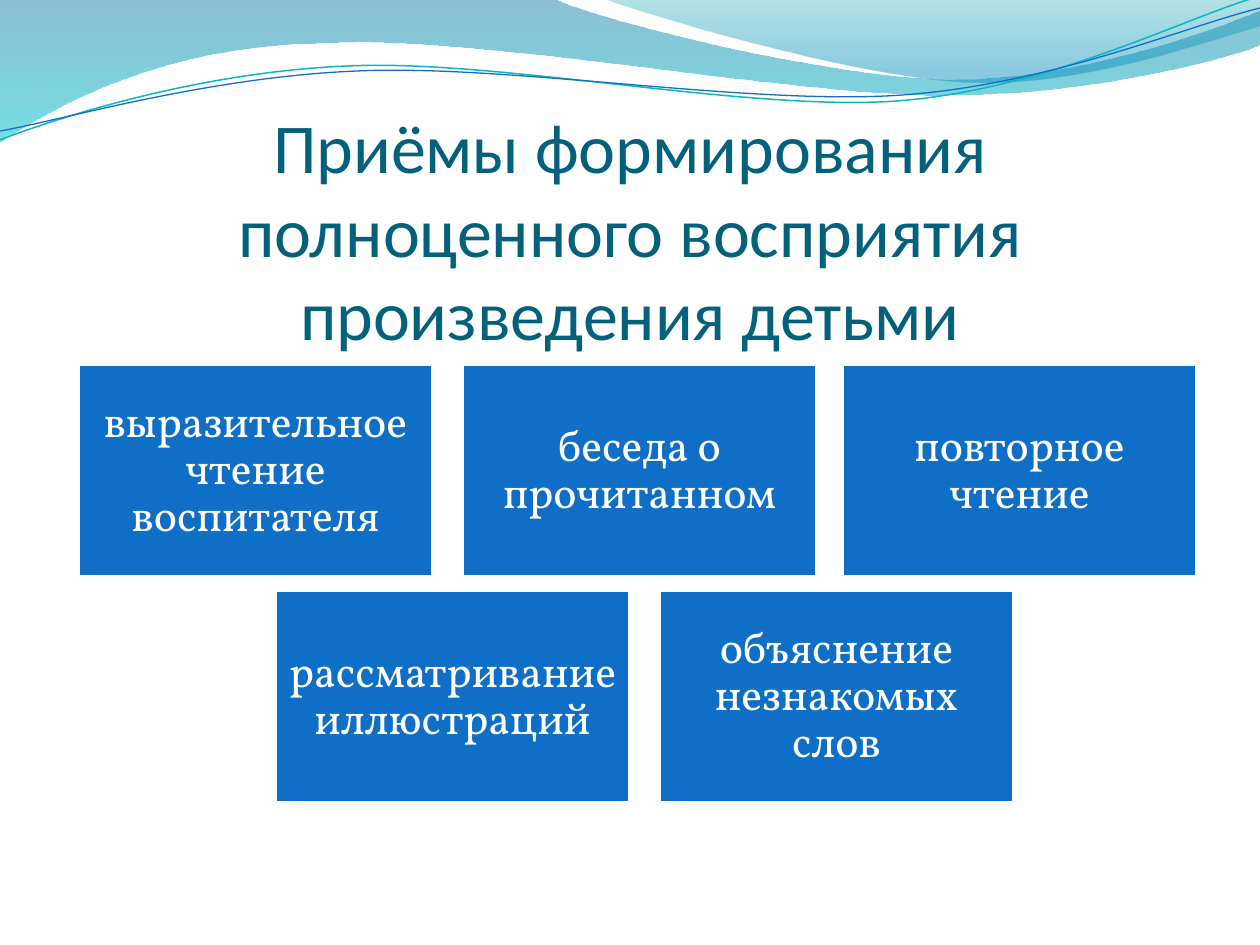
from math import cos, radians, sin

from lxml.etree import SubElement
from pptx import Presentation
from pptx.dml.color import RGBColor
from pptx.enum.shapes import MSO_SHAPE
from pptx.enum.text import MSO_ANCHOR, MSO_AUTO_SIZE, PP_ALIGN
from pptx.oxml.ns import qn
from pptx.util import Pt

PX = 914400 / 126
SIZE = (1260, 945)

COLORS = {
    "blue": "0F6FC6", "teal": "0AB8BF", "title": "04617B", "white": "FFFFFF",
    "deep": "0074A1", "aqua": "00C6CF", "sea": "00A1A9", "sky": "008BBF",
}

TITLE = "Приёмы формирования полноценного восприятия произведения детьми"
TITLE_AT = (63, 98, 1134, 257)

# Each row: top, then (left, text) of its boxes
ROWS = [
    (364, [(78, "выразительное чтение воспитателя"),
           (462, "беседа о прочитанном"),
           (842, "повторное чтение")]),
    (590, [(275, "рассматривание иллюстраций"),
           (659, "объяснение незнакомых слов")]),
]
BOX = (355, 213)

# A path is a start point, then lines (one point) and cubic curves (three)
BANDS = [
    ([[(0, 0)], [(554, -1)],
      [(600, 21), (837, 79), (955, 79)], [(1075, 79), (1207, 33), (1260, 11)],
      [(1261, 45)],
      [(1238, 55), (1096, 96), (940, 95)], [(783, 95), (481, 35), (324, 43)],
      [(163, 45), (58, 105), (-1, 142)], [(0, 0)]],
     [(0, "deep", 45), (1, "aqua", 55)]),
    ([[(604, -1)],
      [(641, 14), (859, 78), (969, 82)], [(1079, 87), (1211, 40), (1260, 26)],
      [(1260, 0)], [(604, -1)]],
     [(0, "sea", 30), (0.8, "sky", 45)]),
]
# Each wave: path as seen, centre of its tilted frame, colour, width
TILT = 357.3
WAVES = [
    ([[(0, 140)], [(60, 117), (199, 72), (349, 66)],
      [(498, 59), (747, 112), (898, 101)],
      [(1049, 89), (1182, 19), (1257, -3)]], (629, 72), "teal", 0.85),
    ([[(0, 131)], [(59, 121), (207, 77), (357, 71)],
      [(508, 64), (752, 106), (903, 95)],
      [(1053, 84), (1186, 26), (1260, 8)]], (629, 74), "blue", 0.75),
]

TITLE_FONT = {"name": "Calibri", "size": Pt(40), "bold": False}
BOX_FONT = {"name": "Vollkorn", "size": Pt(25), "bold": False}


def emu(*vals):
    return [round(v * PX) for v in vals]


def color(name):
    return RGBColor.from_string(COLORS[name])


def put(obj, vals):
    for key, val in vals.items():
        setattr(obj, key, val)


def write(shape, text, font, ink, insets, **frame):
    body = shape.text_frame
    body.text = text
    sides = ("left", "top", "right", "bottom")
    put(body, {f"margin_{s}": e for s, e in zip(sides, emu(*insets))})
    put(body, {"word_wrap": True, "auto_size": MSO_AUTO_SIZE.NONE, **frame})
    para = body.paragraphs[0]
    para.alignment = PP_ALIGN.CENTER
    run = para.runs[0]
    put(run.font, font)
    run.font.color.rgb = color(ink)
    return para


def turn(point, mid, angle):
    dx, dy = point[0] - mid[0], point[1] - mid[1]
    c, s = cos(radians(angle)), sin(radians(angle))
    return mid[0] + dx * c - dy * s, mid[1] + dx * s + dy * c


def draw(shapes, route, close):
    """Build the outline from all points, then make triples into curves."""
    pts = [emu(*p) for leg in route for p in leg]
    pen = shapes.build_freeform(*pts[0], scale=1.0)
    pen.add_line_segments(pts[1:], close=close)
    shape = pen.convert_to_shape()
    shape.shadow.inherit = False
    lines = iter(list(shape._element.iter(qn("a:lnTo"))))
    for leg in route[1:]:
        first, *rest = [next(lines) for _ in leg]
        if rest:
            first.tag = qn("a:cubicBezTo")
        for line in rest:
            first.append(line[0])
            line.getparent().remove(line)
    return shape


def blend(shape, stops):
    """Fill downwards with two partly clear colours."""
    shape.line.fill.background()
    fill = shape.fill
    fill.gradient()
    fill.gradient_angle = 270
    for stop, (pos, name, _) in zip(fill.gradient_stops, stops):
        stop.position = pos
        stop.color.rgb = color(name)
    tags = shape._element.spPr.iter(qn("a:srgbClr"))
    for tag, (_, _, alpha) in zip(tags, stops):
        SubElement(tag, qn("a:alpha")).set("val", str(alpha * 1000))


def main():
    deck = Presentation()
    deck.slide_width, deck.slide_height = emu(*SIZE)
    slide = deck.slides.add_slide(deck.slide_layouts[5])
    shapes = slide.shapes

    for route, stops in BANDS:
        blend(draw(shapes, route, True), stops)
    for route, mid, name, width in WAVES:
        flat = [[turn(p, mid, -TILT) for p in leg] for leg in route]
        wave = draw(shapes, flat, False)
        wave.rotation = TILT
        wave.fill.background()
        wave.line.color.rgb = color(name)
        wave.line.width = Pt(width)

    title = shapes.title
    put(title, dict(zip(("left", "top", "width", "height"), emu(*TITLE_AT))))
    write(title, TITLE, TITLE_FONT, "title", (0, 6, 0, 0),
          vertical_anchor=MSO_ANCHOR.BOTTOM)
    shapes._spTree.append(title._element)

    for top, boxes in ROWS:
        for left, text in boxes:
            box = shapes.add_shape(MSO_SHAPE.RECTANGLE, *emu(left, top, *BOX))
            box.shadow.inherit = False
            box.fill.solid()
            box.fill.fore_color.rgb = color("blue")
            box.line.color.rgb = color("white")
            box.line.width = Pt(2)
            para = write(box, text, BOX_FONT, "white", (12, 12, 12, 12),
                         vertical_anchor=MSO_ANCHOR.MIDDLE)
            para.line_spacing = 0.9

    deck.save("out.pptx")


if __name__ == "__main__":
    main()
